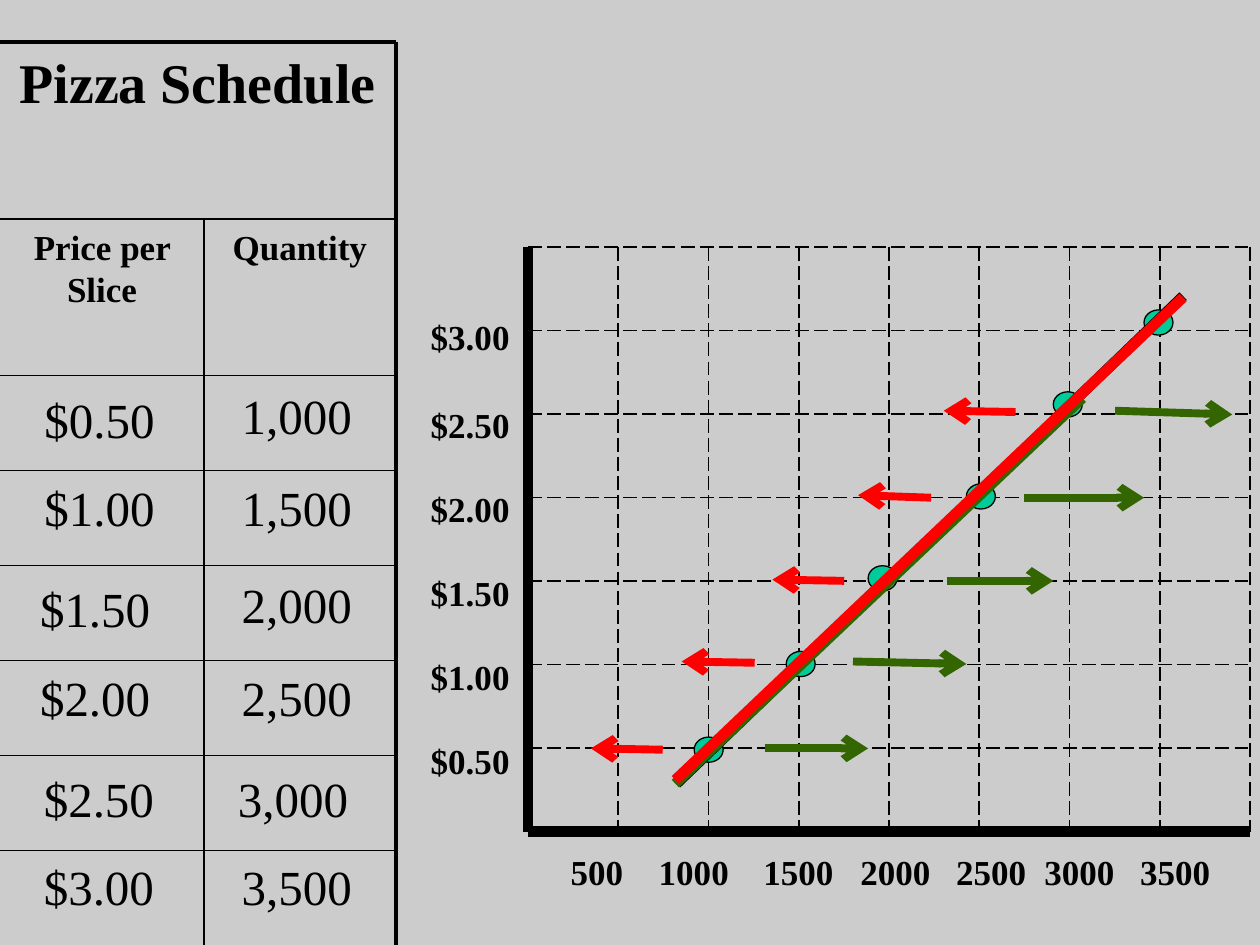
import pptx
import pptx.dml.color
import pptx.enum.dml
import pptx.enum.shapes
import pptx.enum.text
import pptx.oxml.ns
import pptx.util
from lxml import etree
from pptx.util import Inches

CENTER = pptx.enum.text.PP_ALIGN.CENTER
LEFT = pptx.enum.text.PP_ALIGN.LEFT
BLACK, GREEN, RED, TEAL = "000000", "336600", "FF0000", "00CC99"


def add_line(parent, start, end, width, color=BLACK, dashed=False, arrow=False):
    line = parent.add_connector(
        pptx.enum.shapes.MSO_CONNECTOR.STRAIGHT,
        *[Inches(value) for value in (*start, *end)])
    line.line.width = pptx.util.Pt(width)
    line.line.color.rgb = pptx.dml.color.RGBColor.from_string(color)
    if dashed:
        line.line.dash_style = pptx.enum.dml.MSO_LINE.LONG_DASH
    if arrow:
        etree.SubElement(line.line._get_or_add_ln(),
                         pptx.oxml.ns.qn("a:tailEnd"), type="arrow")
    etree.SubElement(line._element.spPr, pptx.oxml.ns.qn("a:effectLst"))


def add_label(parent, box, texts, size, bold=False, align=CENTER, wrap=True):
    """Add a text box with one paragraph per text and return its paragraphs."""
    frame = parent.add_textbox(*[Inches(value) for value in box]).text_frame
    frame.word_wrap = wrap
    for index, text in enumerate(texts):
        paragraph = frame.paragraphs[0] if index == 0 else frame.add_paragraph()
        paragraph.alignment = align
        run = paragraph.add_run()
        run.text = text
        run.font.name = "Times New Roman"
        run.font.size = pptx.util.Pt(size)
        run.font.bold = bold
        run.font.color.rgb = pptx.dml.color.RGBColor.from_string(BLACK)
    return frame.paragraphs


presentation = pptx.Presentation()
presentation.slide_width, presentation.slide_height = Inches(10), Inches(7.5)
slide = presentation.slides.add_slide(presentation.slide_layouts[6])
slide.background.fill.solid()
slide.background.fill.fore_color.rgb = pptx.dml.color.RGBColor.from_string("CCCCCC")
shapes = slide.shapes

# Schedule: headings, rules and values
add_label(shapes, (1.62, 1.74, 1.52, 1.24), ["Quantity"], 20, bold=True)
add_label(shapes, (0, 1.74, 1.62, 1.24), ["Price per Slice"], 20, bold=True)
add_label(shapes, (0, 0.33, 3.14, 1.4), ["Pizza Schedule"], 32, bold=True)

add_line(shapes, (0, 0.33), (3.14, 0.33), 2.25)
for y in [1.74] + [2.98 + 0.754 * row for row in range(6)]:
    add_line(shapes, (0, y), (3.14, y), 1)
add_line(shapes, (3.14, 0.33), (3.14, 7.5), 2.25)
add_line(shapes, (1.62, 1.74), (1.62, 7.5), 1)

# price, its left, top and width; quantity, its top and width
schedule = [
    ("$0.50", 0.07, 3.04, 1.44, "1,000", 3.01, 1.57),
    ("$1.00", 0.07, 3.74, 1.44, "1,500", 3.74, 1.57),
    ("$1.50", 0, 4.54, 1.51, "2,000", 4.51, 1.57),
    ("$2.00", 0, 5.25, 1.51, "2,500", 5.25, 1.57),
    ("$2.50", 0, 6.05, 1.57, "3,000", 6.05, 1.51),
    ("$3.00", 0, 6.75, 1.57, "3,500", 6.75, 1.57),
]
for price, left, price_top, price_width, quantity, top, width in schedule:
    add_label(shapes, (left, price_top, price_width, 0.57), [price], 28)
    add_label(shapes, (1.57, top, width, 0.57), [quantity], 28)

# Graph grid, axes and axis labels
graph = shapes.add_group_shape().shapes
x_min, x_max, y_top, y_base = 4.19, 9.92, 1.96, 6.6
for row in range(8):
    y = y_top + (y_base - y_top) / 7 * row
    is_axis = row == 7
    add_line(graph, (x_min, y), (x_max, y), 6 if is_axis else 1, dashed=not is_axis)
for column in range(9):
    x = x_min + (x_max - x_min) / 8 * column
    is_axis = column == 0
    add_line(graph, (x, y_top), (x, y_base), 6 if is_axis else 1, dashed=not is_axis)

axis_prices = [row[0] for row in reversed(schedule)]
price_labels = add_label(graph, (3.32, 2.12, 0.83, 4.13), axis_prices, 20,
                         bold=True, align=LEFT, wrap=False)
for paragraph in price_labels:
    paragraph.line_spacing = 2.0
price_labels[1].line_spacing = 2.1

quantity_label = add_label(graph, (4.43, 6.7, 5.87, 0.43),
                           ["500\t1000\t1500\t2000\t2500\t3000\t3500"], 20,
                           bold=True, align=LEFT)[0]
tab_stops = etree.SubElement(quantity_label._p.get_or_add_pPr(),
                             pptx.oxml.ns.qn("a:tabLst"))
for position in (0.7, 1.53, 2.3, 3.06, 3.76, 4.52):
    etree.SubElement(tab_stops, pptx.oxml.ns.qn("a:tab"),
                     pos=str(Inches(position)), algn="l")

# Supply points
for x, y in [(8.36, 3.11), (9.08, 2.46), (6.89, 4.49),
             (6.24, 5.17), (5.51, 5.85), (7.67, 3.84)]:
    point = shapes.add_shape(pptx.enum.shapes.MSO_SHAPE.OVAL,
                             Inches(x), Inches(y), Inches(0.23), Inches(0.2))
    point.shadow.inherit = False
    point.fill.solid()
    point.fill.fore_color.rgb = pptx.dml.color.RGBColor.from_string(TEAL)
    point.line.color.rgb = pptx.dml.color.RGBColor.from_string(BLACK)
    point.line.width = pptx.util.Pt(0.75)

# Supply curves, with arrows for an increase (green) and a decrease (red)
add_line(shapes, (5.37, 6.22), (9.39, 2.35), 6)
add_line(shapes, (5.36, 6.22), (8.59, 3.16), 6, GREEN)
increases = [
    ((7.52, 4.61), (8.36, 4.61)),
    ((6.77, 5.25), (7.67, 5.27)),
    ((8.13, 3.95), (9.08, 3.95)),
    ((8.85, 3.26), (9.78, 3.29)),
    ((6.07, 5.94), (6.89, 5.94)),
]
decreases = [
    ((5.26, 5.95), (4.69, 5.94)),
    ((5.99, 5.26), (5.41, 5.25)),
    ((6.7, 4.61), (6.13, 4.6)),
    ((7.39, 3.95), (6.81, 3.93)),
    ((8.06, 3.27), (7.49, 3.26)),
]
for shifts, color in ((increases, GREEN), (decreases, RED)):
    for start, end in shifts:
        add_line(shapes, start, end, 4.5, color, arrow=True)
add_line(shapes, (5.36, 6.19), (9.39, 2.36), 6, RED)

presentation.save("out.pptx")
